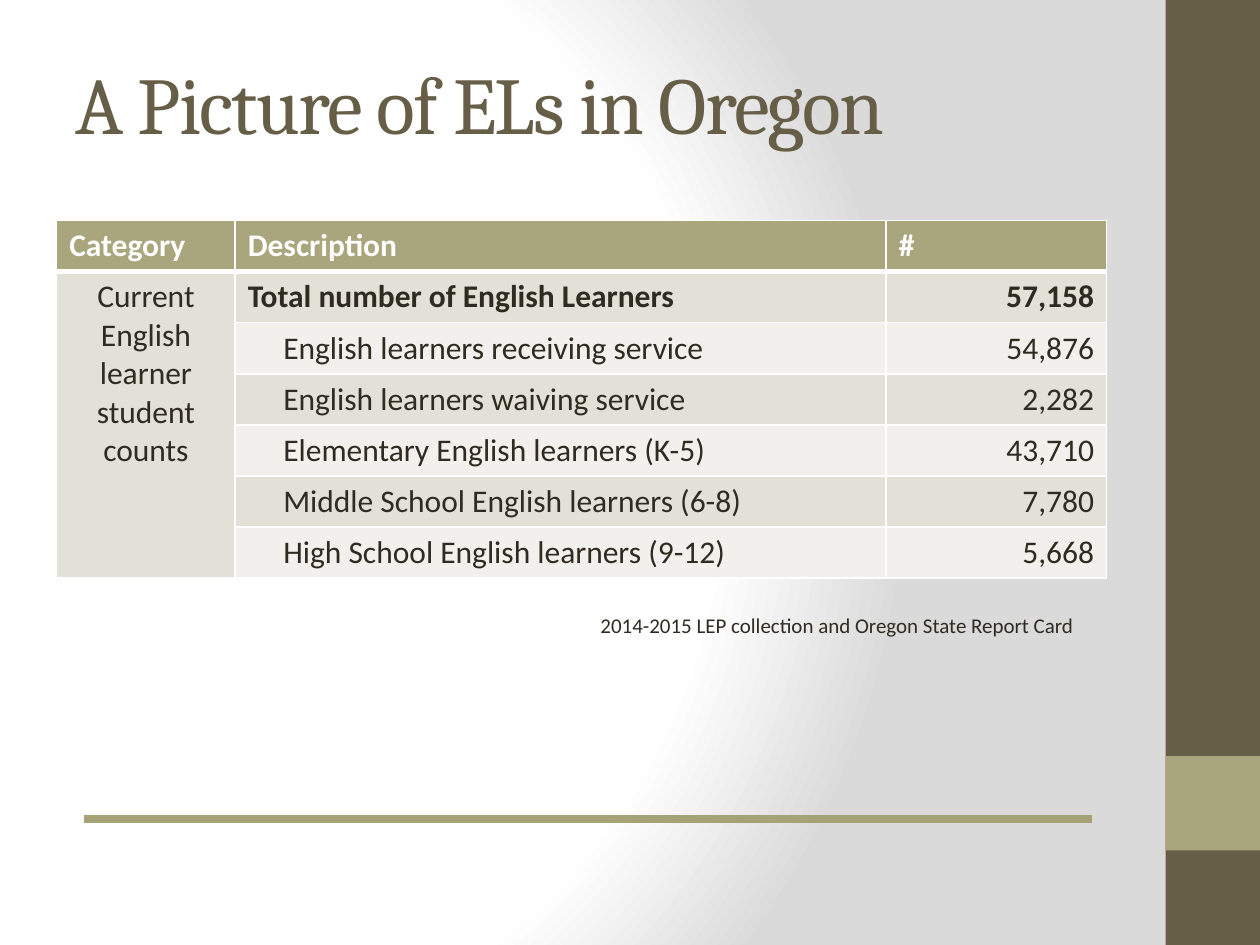
from dataclasses import dataclass

from lxml import etree
from pptx import Presentation
from pptx.dml.color import RGBColor
from pptx.enum.shapes import MSO_CONNECTOR, MSO_SHAPE
from pptx.enum.text import MSO_ANCHOR, MSO_AUTO_SIZE, PP_ALIGN
from pptx.oxml import parse_xml
from pptx.oxml.ns import nsdecls, qn
from pptx.util import Pt

RECT = MSO_SHAPE.RECTANGLE
STRAIGHT = MSO_CONNECTOR.STRAIGHT
LEFT, CENTER, RIGHT = PP_ALIGN.LEFT, PP_ALIGN.CENTER, PP_ALIGN.RIGHT
MIDDLE = MSO_ANCHOR.MIDDLE
NO_AUTOFIT = MSO_AUTO_SIZE.NONE

BROWN = RGBColor(0x67, 0x5E, 0x47)
OLIVE = RGBColor(0xA9, 0xA5, 0x7C)
RULE = RGBColor(0xA6, 0xA2, 0x78)
INK = RGBColor(0x2F, 0x2B, 0x20)
WHITE = RGBColor(0xFF, 0xFF, 0xFF)
GRAY = RGBColor(0xDA, 0xDA, 0xDA)
BANDS = (RGBColor(0xE2, 0xE1, 0xD7), RGBColor(0xF1, 0xF0, 0xEC))

HEADING_FONT = "Cambria"
BODY_FONT = "Calibri"
CELL_MARGIN = 7.2
INDENT = 20.3
ROW_HEIGHT = 29.2
COLUMN_WIDTHS = (102, 372, 126)


@dataclass
class Bar:
    left: float
    top: float
    width: float
    height: float
    color: RGBColor


@dataclass
class Count:
    description: str
    number: str
    is_total: bool = False


BARS = (Bar(666, 0, 54, 540, BROWN), Bar(666, 432, 54, 54, OLIVE))
HEADERS = ("Category", "Description", "#")
CATEGORY = "Current English learner student counts"
COUNTS = (
    Count("Total number of English Learners", "57,158", True),
    Count("English learners receiving service", "54,876"),
    Count("English learners waiving service", "2,282"),
    Count("Elementary English learners (K-5)", "43,710"),
    Count("Middle School English learners (6-8)", "7,780"),
    Count("High School English learners (9-12)", "5,668"),
)


def set_background(slide) -> None:
    stops = "".join(
        f'<a:gs pos="{pos}"><a:srgbClr val="{color}"/></a:gs>'
        for pos, color in ((0, WHITE), (75000, WHITE), (100000, GRAY))
    )
    bg = parse_xml(
        f'<p:bg {nsdecls("p", "a")}><p:bgPr><a:gradFill rotWithShape="1">'
        f'<a:gsLst>{stops}</a:gsLst><a:path path="circle">'
        '<a:fillToRect l="20000" t="50000" r="100000" b="50000"/>'
        "</a:path></a:gradFill><a:effectLst/></p:bgPr></p:bg>"
    )
    slide.element.cSld.insert(0, bg)


def add_bar(slide, bar: Bar) -> None:
    sp = slide.shapes.add_shape(
        RECT, Pt(bar.left), Pt(bar.top), Pt(bar.width), Pt(bar.height)
    )
    sp.shadow.inherit = False
    sp.fill.solid()
    sp.fill.fore_color.rgb = bar.color
    sp.line.fill.background()


def write(tf, text: str, size: float, color: RGBColor, font: str = BODY_FONT,
          bold: bool = False, align: PP_ALIGN = LEFT):
    p = tf.paragraphs[0]
    p.alignment = align
    r = p.add_run()
    r.text = text
    r.font.name = font
    r.font.size = Pt(size)
    r.font.bold = bold
    r.font.color.rgb = color
    return r


def set_title(slide, text: str) -> None:
    sp = slide.shapes.title
    sp.left, sp.top, sp.width, sp.height = Pt(36), Pt(21.6), Pt(600), Pt(74)
    tf = sp.text_frame
    tf.auto_size = NO_AUTOFIT
    tf.vertical_anchor = MIDDLE
    r = write(tf, text, 46, BROWN, HEADING_FONT)
    r.font._element.set("spc", "-100")


def set_borders(cell, top: float, bottom: float) -> None:
    tc_pr = cell._tc.get_or_add_tcPr()
    for side, width in (("L", 1), ("R", 1), ("T", top), ("B", bottom)):
        ln = etree.SubElement(tc_pr, qn(f"a:ln{side}"), w=str(Pt(width)))
        fill = etree.SubElement(ln, qn("a:solidFill"))
        etree.SubElement(fill, qn("a:srgbClr"), val=str(WHITE))


def add_counts_table(slide) -> None:
    row_total = len(COUNTS) + 1
    table = slide.shapes.add_table(
        row_total, len(HEADERS), Pt(32.4), Pt(126),
        Pt(sum(COLUMN_WIDTHS)), Pt(ROW_HEIGHT * row_total),
    ).table
    for column, width in zip(table.columns, COLUMN_WIDTHS):
        column.width = Pt(width)
    for i, row in enumerate(table.rows):
        row.height = Pt(ROW_HEIGHT)
        for cell in row.cells:
            set_borders(cell, 3 if i == 1 else 1, 3 if i == 0 else 1)
            cell.fill.solid()
            cell.fill.fore_color.rgb = BANDS[(i - 1) % 2] if i else OLIVE
    for j, header in enumerate(HEADERS):
        write(table.cell(0, j).text_frame, header, 18, WHITE, bold=True)
    category = table.cell(1, 0)
    category.merge(table.cell(len(COUNTS), 0))
    write(category.text_frame, CATEGORY, 18, INK, align=CENTER)
    for i, count in enumerate(COUNTS, 1):
        description, number = table.cell(i, 1), table.cell(i, 2)
        if not count.is_total:
            description.margin_left = Pt(CELL_MARGIN + INDENT)
        write(description.text_frame, count.description, 18, INK,
              bold=count.is_total)
        write(number.text_frame, count.number, 18, INK,
              bold=count.is_total, align=RIGHT)


def add_source_note(slide, text: str) -> None:
    sp = slide.shapes.add_textbox(Pt(336), Pt(346.4), Pt(300), Pt(21.6))
    sp.text_frame.word_wrap = True
    write(sp.text_frame, text, 12, INK)


def add_rule(slide) -> None:
    line = slide.shapes.add_connector(STRAIGHT, Pt(48), Pt(468), Pt(624), Pt(468))
    line.line.color.rgb = RULE
    line.line.width = Pt(4.5)
    etree.SubElement(line._element.spPr, qn("a:effectLst"))


def main() -> None:
    prs = Presentation()
    prs.slide_width, prs.slide_height = Pt(720), Pt(540)
    slide = prs.slides.add_slide(prs.slide_layouts[5])
    set_background(slide)
    for bar in BARS:
        add_bar(slide, bar)
    set_title(slide, "A Picture of ELs in Oregon")
    add_counts_table(slide)
    add_source_note(slide, "2014-2015 LEP collection and Oregon State Report Card")
    add_rule(slide)
    prs.save("out.pptx")


if __name__ == "__main__":
    main()
